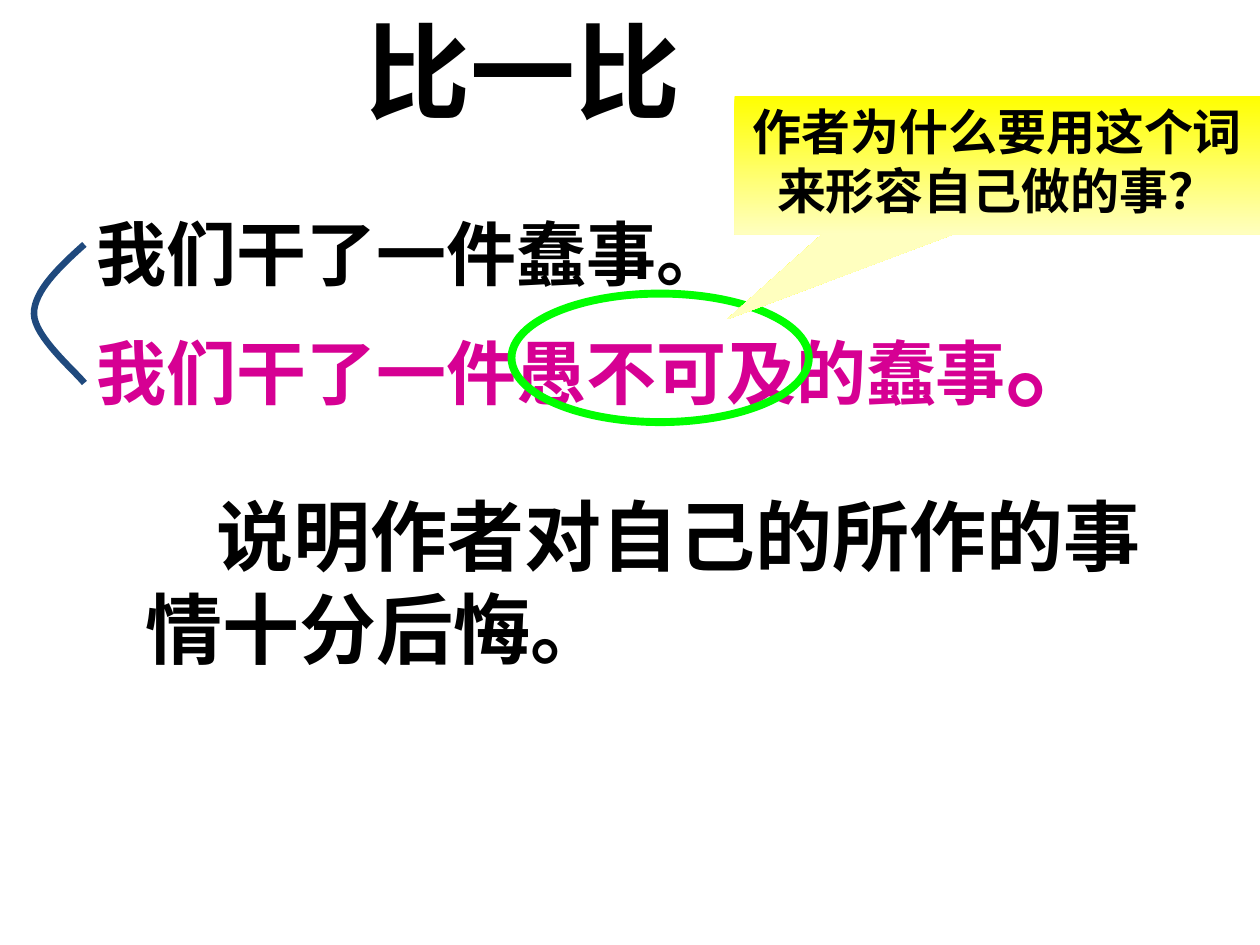
from pptx import Presentation
from pptx.dml.color import RGBColor
from pptx.enum.shapes import MSO_SHAPE
from pptx.enum.text import MSO_ANCHOR, PP_ALIGN
from pptx.oxml.ns import qn
from pptx.util import Inches, Pt

OVAL, CALLOUT = MSO_SHAPE.OVAL, MSO_SHAPE.RECTANGULAR_CALLOUT
LEFT, CENTER = PP_ALIGN.LEFT, PP_ALIGN.CENTER
TOP = MSO_ANCHOR.TOP
CJK = "Noto Sans CJK SC"
LEADING = 1.2


def color(code):
    return RGBColor.from_string(code)


def write(shape, *lines, font=CJK, align=LEFT, indent=0):
    """Fill a shape with paragraphs, each a list of (text, size, colour)."""
    frame = shape.text_frame
    frame.word_wrap = True
    frame.vertical_anchor = TOP
    for i, runs in enumerate(lines):
        para = frame.add_paragraph() if i else frame.paragraphs[0]
        para.alignment = align
        para.line_spacing = Pt(LEADING * max(size for _, size, _ in runs))
        if indent:
            para._p.get_or_add_pPr().set("indent", str(Inches(indent)))
        for text, size, tint in runs:
            run = para.add_run()
            run.text = text
            run.font.name, run.font.size, run.font.bold = font, Pt(size), True
            run.font.color.rgb = color(tint)
            east = run._r.get_or_add_rPr().makeelement(qn("a:ea"), {"typeface": CJK})
            run.font._element.find(qn("a:latin")).addnext(east)


deck = Presentation()
deck.slide_width, deck.slide_height = Inches(10), Inches(7.5)
slide = deck.slides.add_slide(deck.slide_layouts[6])
shapes = slide.shapes

# Sentences to compare, and the title
pair = shapes.add_textbox(Inches(0.67), Inches(1.62), Inches(8.58), Inches(1.77))
write(pair,
      [("我们干了一件蠢事。", 40, "000000")],
      [("我们干了一件愚不可及的蠢事", 40, "D60093"), ("。", 60, "D60093")],
      font="Arial")

title = shapes.add_textbox(Inches(2.8), 0, Inches(2.71), Inches(1.1))
write(title, [("比一比", 60, "000000")], font="Comic Neue")

# Ring around the key word
ring = shapes.add_shape(OVAL, Inches(4.06), Inches(2.33), Inches(2.36), Inches(1.02))
ring.shadow.inherit = False
ring.fill.background()
ring.line.color.rgb = color("00FF00")
ring.line.width = Pt(4.5)

# Curve that links the two sentences: two cubic arcs, sampled in whole EMU
arcs = [[(0.67, 1.94), (0.47, 2.12), (0.27, 2.31), (0.27, 2.49)],
        [(0.27, 2.49), (0.27, 2.67), (0.6, 2.95), (0.67, 3.04)]]
steps = 16
points = []
for arc in arcs:
    for i in range(1, steps + 1):
        t = i / steps
        parts = [(1 - t) ** 3, 3 * t * (1 - t) ** 2, 3 * t * t * (1 - t), t ** 3]
        points.append([Inches(sum(w * p[axis] for w, p in zip(parts, arc)))
                       for axis in (0, 1)])
start = [Inches(value) for value in arcs[0][0]]
pen = shapes.build_freeform(*start)
pen.add_line_segments(points, close=False)
link = pen.convert_to_shape()
link.shadow.inherit = False
link.fill.background()
link.line.color.rgb = color("1F497D")
link.line.width = Pt(3.75)

# Question
ask = shapes.add_shape(CALLOUT, Inches(5.83), Inches(0.76), Inches(4.17), Inches(1.1))
ask.adjustments[0], ask.adjustments[1] = -0.514, 1.113
ask.shadow.inherit = False
ask.line.fill.background()
ask.fill.gradient()
ask.fill.gradient_angle = 270
for stop, tint in zip(ask.fill.gradient_stops, ("FFFF00", "FFFFBF")):
    stop.color.rgb = color(tint)
write(ask, [("作者为什么要用这个词来形容自己做的事？", 28, "000000")], align=CENTER)

# Answer
answer = shapes.add_textbox(Inches(1.06), Inches(3.83), Inches(8.11), Inches(1.57))
write(answer, [("说明作者对自己的所作的事情十分后悔。", 44, "000000")], indent=0.56)

deck.save("out.pptx")
